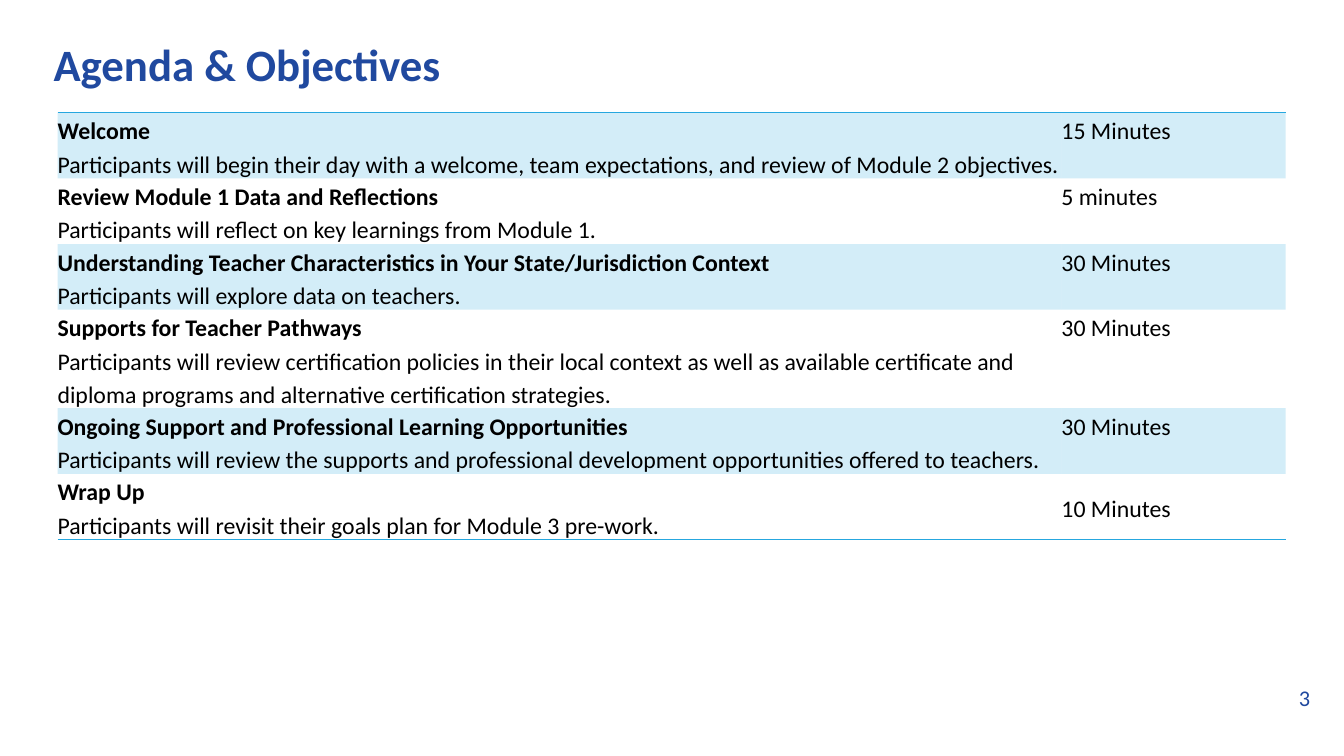
from lxml import etree
from pptx import Presentation
from pptx.dml.color import RGBColor
from pptx.enum.text import MSO_ANCHOR, PP_ALIGN
from pptx.oxml.ns import qn
from pptx.util import Cm, Pt

TOP, MIDDLE, BOTTOM = MSO_ANCHOR.TOP, MSO_ANCHOR.MIDDLE, MSO_ANCHOR.BOTTOM
LEFT, RIGHT = PP_ALIGN.LEFT, PP_ALIGN.RIGHT
FONT, NAVY, SKY, BLACK = "Calibri", "20499F", "26A7DF", "000000"
PLAIN = "{2D5ABB26-0587-4C30-8999-92F81FD0307C}"

AGENDA = [
    ("Welcome",
     "Participants will begin their day with a welcome, team expectations, "
     "and review of Module 2 objectives.", "15 Minutes"),
    ("Review Module 1 Data and Reflections",
     "Participants will reflect on key learnings from Module 1.", "5 minutes"),
    ("Understanding Teacher Characteristics in Your State/Jurisdiction Context",
     "Participants will explore data on teachers.", "30 Minutes"),
    ("Supports for Teacher Pathways",
     "Participants will review certification policies in their local context "
     "as well as available certificate and diploma programs and alternative "
     "certification strategies.", "30 Minutes"),
    ("Ongoing Support and Professional Learning Opportunities",
     "Participants will review the supports and professional development "
     "opportunities offered to teachers.", "30 Minutes"),
    ("Wrap Up",
     "Participants will revisit their goals plan for Module 3 pre-work.",
     "10 Minutes"),
]


def paint(hue):
    return RGBColor.from_string(hue)


def add_run(par, text, size, hue, bold=False):
    run = par.add_run()
    run.text = text
    font = run.font
    font.name, font.size, font.bold = FONT, Pt(size), bold
    font.color.rgb = paint(hue)


def fill_box(shape, box, text, size, anchor, align, bold=False):
    """Place a one-line text shape in its box, without insets."""
    shape.left, shape.top, shape.width, shape.height = map(Cm, box)
    frame = shape.text_frame
    frame.word_wrap = True
    frame.vertical_anchor = anchor
    frame.margin_left = frame.margin_right = 0
    frame.margin_top = frame.margin_bottom = 0
    par = frame.paragraphs[0]
    par.alignment = align
    add_run(par, text, size, NAVY, bold)


def add_title(slide, box):
    fill_box(slide.shapes.title, box, "Agenda & Objectives", 32, MIDDLE, LEFT, True)


def add_number(slide, box):
    shape = slide.shapes.add_textbox(*map(Cm, box))
    fill_box(shape, box, "3", 16, BOTTOM, RIGHT)


def add_rule(cell, side):
    """Draw a 1 pt border; side is the XML tag of the cell edge."""
    line = etree.Element(qn(side), w=str(Pt(1)))
    fill = etree.SubElement(line, qn("a:solidFill"))
    etree.SubElement(fill, qn("a:srgbClr"), val=SKY)
    cell._tc.get_or_add_tcPr().insert(0, line)


def shade(cell, band):
    if not band:
        cell.fill.background()
        return
    cell.fill.solid()
    cell.fill.fore_color.rgb = paint(SKY)
    tint = cell._tc.tcPr.find(".//" + qn("a:srgbClr"))
    etree.SubElement(tint, qn("a:alpha"), val="20000")


def fill_cell(cell, lines, anchor):
    """Write (text, bold) lines, one paragraph each."""
    cell.margin_left = cell.margin_right = 0
    cell.margin_top = cell.margin_bottom = 0
    cell.vertical_anchor = anchor
    frame = cell.text_frame
    for i, (text, bold) in enumerate(lines):
        par = frame.add_paragraph() if i else frame.paragraphs[0]
        par.line_spacing = 1.15
        add_run(par, text, 17, BLACK, bold)


def add_agenda(slide, box):
    left, top, width, height = box
    last = len(AGENDA) - 1
    frame = slide.shapes.add_table(len(AGENDA), 2, *map(Cm, box))
    table = frame.table
    table.first_row = table.horz_banding = False
    table._tbl.tblPr.find(qn("a:tableStyleId")).text = PLAIN
    table.columns[0].width = Cm(25.3)
    table.columns[1].width = Cm(width - 25.3)
    tall = 3
    unit = height / (len(AGENDA) + 0.5)
    for i, (head, aim, time) in enumerate(AGENDA):
        table.rows[i].height = Cm(unit * (1.5 if i == tall else 1))
        anchor = MIDDLE if i == last else TOP
        for j, lines in enumerate(([(head, True), (aim, False)], [(time, False)])):
            cell = table.cell(i, j)
            fill_cell(cell, lines, anchor)
            shade(cell, i % 2 == 0)
            if i == 0:
                add_rule(cell, "a:lnT")
            if i == last:
                add_rule(cell, "a:lnB")


def main():
    deck = Presentation()
    deck.slide_width, deck.slide_height = Cm(33.87), Cm(19.05)
    slide = deck.slides.add_slide(deck.slide_layouts[5])
    add_title(slide, (1.35, 0.43, 31.67, 2.36))
    add_number(slide, (30.5, 17.15, 2.52, 0.76))
    add_agenda(slide, (1.45, 2.84, 30.95, 10.4))
    deck.save("out.pptx")


if __name__ == "__main__":
    main()
